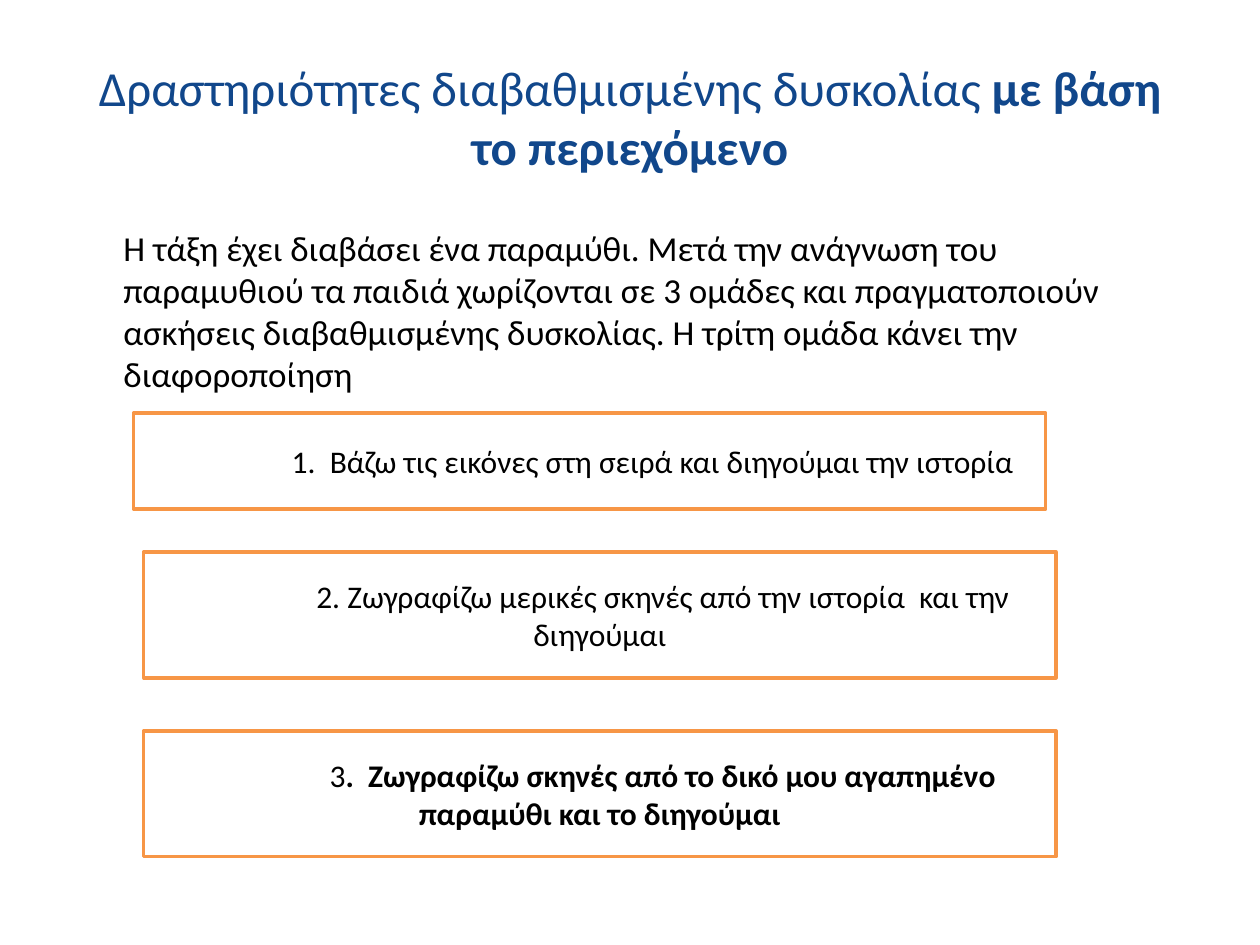
from pptx import Presentation
from pptx.dml.color import RGBColor
from pptx.enum.shapes import MSO_SHAPE
from pptx.enum.text import MSO_ANCHOR, PP_ALIGN
from pptx.util import Inches, Pt

FONT = "Calibri"
BLUE, BLACK, WHITE, ORANGE = "11478B", "000000", "FFFFFF", "F79646"

# Each text is a list of (words, bold) runs
TITLE = [("Δραστηριότητες διαβαθμισμένης δυσκολίας", False),
         (" με βάση το περιεχόμενο", True)]
INTRO = [("Η τάξη έχει διαβάσει ένα παραμύθι. Μετά την ανάγνωση του παραμυθιού "
          "τα παιδιά χωρίζονται σε 3 ομάδες και πραγματοποιούν ασκήσεις "
          "διαβαθμισμένης δυσκολίας. Η τρίτη ομάδα κάνει την διαφοροποίηση", False)]
# left, top, height, runs
ACTIVITIES = [
    (1.06, 3.28, 0.76,
     [("1.  Βάζω τις εικόνες στη σειρά και διηγούμαι την ιστορία", False)]),
    (1.14, 4.38, 1,
     [("2. Ζωγραφίζω μερικές σκηνές από την ιστορία  και την διηγούμαι", False)]),
    (1.14, 5.8, 1,
     [("3", False),
      (".  Ζωγραφίζω σκηνές από το δικό μου αγαπημένο παραμύθι και το διηγούμαι", True)]),
]
BOX_WIDTH = 7.24


def rgb(value):
    return RGBColor.from_string(value)


def write(sp, runs, size, color=BLACK, align=PP_ALIGN.LEFT,
          anchor=MSO_ANCHOR.MIDDLE, margin=0, first_line=0):
    """Fill a shape with one formatted paragraph; indents are in inches."""
    tf = sp.text_frame
    tf.word_wrap = True
    tf.vertical_anchor = anchor
    p = tf.paragraphs[0]
    p.alignment = align
    pPr = p._p.get_or_add_pPr()
    pPr.set("marL", str(Inches(margin)))
    pPr.set("indent", str(Inches(first_line)))
    pPr.insert_element_before(pPr.makeelement(
        "{http://schemas.openxmlformats.org/drawingml/2006/main}buNone", {}),
        "a:tabLst", "a:defRPr", "a:extLst")
    for text, bold in runs:
        r = p.add_run()
        r.text = text
        r.font.name = FONT
        r.font.size = Pt(size)
        r.font.bold = bold
        r.font.color.rgb = rgb(color)


def place(sp, left, top, width, height):
    sp.left, sp.top = Inches(left), Inches(top)
    sp.width, sp.height = Inches(width), Inches(height)


def add_activity(s, left, top, height, runs):
    sp = s.shapes.add_shape(MSO_SHAPE.RECTANGLE, Inches(left), Inches(top),
                            Inches(BOX_WIDTH), Inches(height))
    sp.shadow.inherit = False
    sp.fill.solid()
    sp.fill.fore_color.rgb = rgb(WHITE)
    sp.line.color.rgb = rgb(ORANGE)
    sp.line.width = Pt(2)
    write(sp, runs, 18, align=PP_ALIGN.CENTER, first_line=1)


def main():
    prs = Presentation()
    prs.slide_width, prs.slide_height = Inches(10), Inches(7.5)
    s = prs.slides.add_slide(prs.slide_layouts[1])
    title, body = s.placeholders
    place(title, 0.5, 0.3, 9, 1.25)
    write(title, TITLE, 28, color=BLUE, align=PP_ALIGN.CENTER)
    place(body, 0.5, 1.75, 9, 4.95)
    write(body, INTRO, 20, anchor=MSO_ANCHOR.TOP, margin=0.38)
    for activity in ACTIVITIES:
        add_activity(s, *activity)
    prs.save("out.pptx")


if __name__ == "__main__":
    main()
